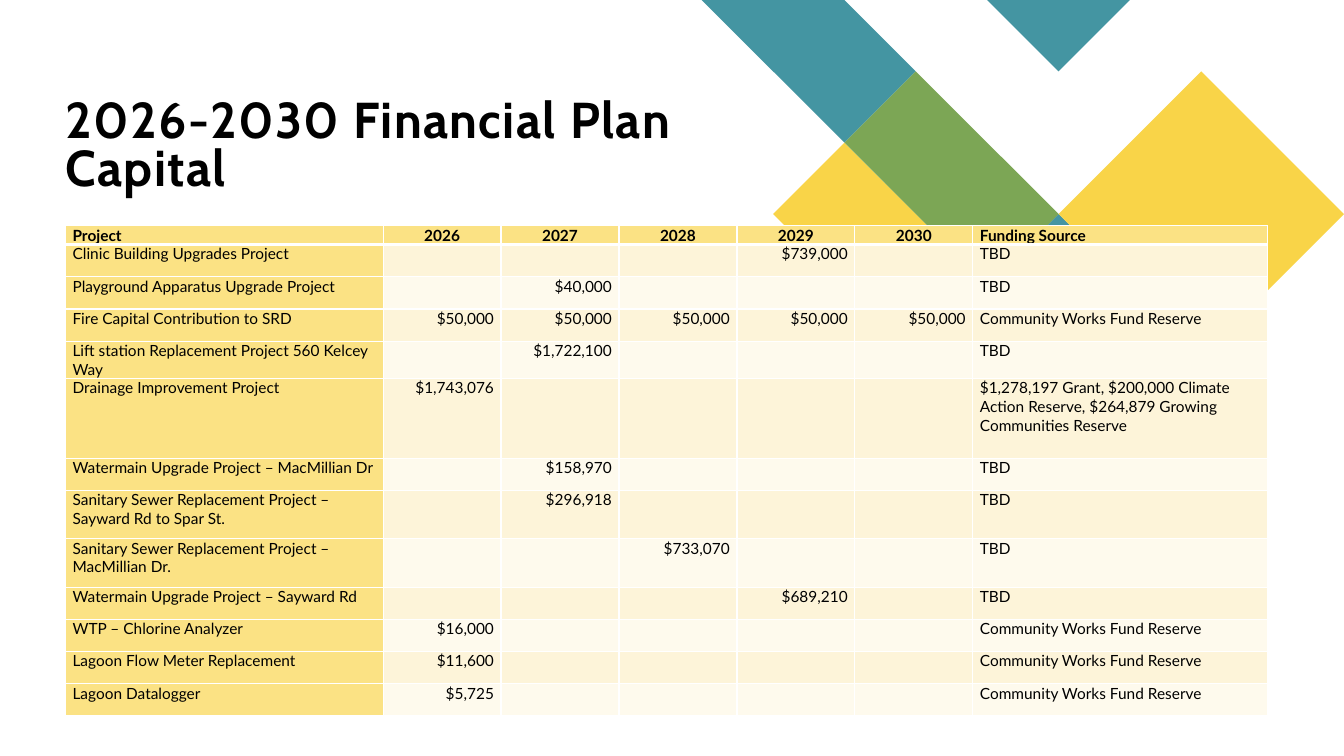
from lxml import etree
from pptx import Presentation
from pptx import util as u
from pptx.dml.color import RGBColor
from pptx.enum import text
from pptx.oxml import ns

COLORS = {
    "teal": "4495A2", "yellow": "F9D448", "green": "7CA655", "gold": "FBE284",
    "cream": "FDF4D9", "ivory": "FEFAED", "white": "FFFFFF", "black": "000000",
}
LEFT, CENTER, RIGHT = text.PP_ALIGN.LEFT, text.PP_ALIGN.CENTER, text.PP_ALIGN.RIGHT
YEARS = ["2026", "2027", "2028", "2029", "2030"]
COLUMN_WIDTHS = [3.15] + [1.17] * len(YEARS) + [2.92]
HEADER_HEIGHT = 0.16
RESERVE = "Community Works Fund Reserve"
DRAINAGE_FUNDING = ("$1,278,197 Grant, $200,000 Climate Action Reserve, "
                    "$264,879 Growing Communities Reserve")
PROJECTS = [
    ("Clinic Building Upgrades Project", {"2029": "$739,000"}, "TBD", 0.32),
    ("Playground Apparatus Upgrade Project", {"2027": "$40,000"}, "TBD", 0.32),
    ("Fire Capital Contribution to SRD", dict.fromkeys(YEARS, "$50,000"), RESERVE, 0.32),
    ("Lift station Replacement Project 560 Kelcey Way", {"2027": "$1,722,100"}, "TBD", 0.32),
    ("Drainage Improvement Project", {"2026": "$1,743,076"}, DRAINAGE_FUNDING, 0.79),
    ("Watermain Upgrade Project – MacMillian Dr", {"2027": "$158,970"}, "TBD", 0.32),
    ("Sanitary Sewer Replacement Project – Sayward Rd to Spar St.",
     {"2027": "$296,918"}, "TBD", 0.48),
    ("Sanitary Sewer Replacement Project – MacMillian Dr.", {"2028": "$733,070"}, "TBD", 0.48),
    ("Watermain Upgrade Project – Sayward Rd", {"2029": "$689,210"}, "TBD", 0.32),
    ("WTP – Chlorine Analyzer", {"2026": "$16,000"}, RESERVE, 0.32),
    ("Lagoon Flow Meter Replacement", {"2026": "$11,600"}, RESERVE, 0.32),
    ("Lagoon Datalogger", {"2026": "$5,725"}, RESERVE, 0.32),
]
PATTERN = [
    ("teal", [[(3, 1), (2, 0), (0, 0), (2, 2)], [(6, 4), (5, 3), (4, 4), (5, 5)]]),
    ("yellow", [[(2, 2), (1, 3), (3, 5), (4, 4)]]),
    ("teal", [[(6, 0), (4, 0), (5, 1)]]),
    ("green", [[(3, 1), (2, 2), (4, 4), (5, 3)]]),
    ("yellow", [[(9, 3), (7, 1), (5, 3), (7, 5)]]),
]


def rgb(name):
    """Return the named colour."""
    return RGBColor.from_string(COLORS[name])


def write(frame, words, font="Lato", size=11, bold=False, color="black",
          align=LEFT, line_spacing=None, tracking=None):
    """Put one formatted paragraph into a text frame."""
    paragraph = frame.paragraphs[0]
    paragraph.alignment = align
    paragraph.line_spacing = line_spacing
    if not words:
        etree.SubElement(paragraph._p, ns.qn("a:endParaRPr"), sz=str(size * 100))
        return
    run = paragraph.add_run()
    run.text = words
    run.font.name, run.font.size, run.font.bold = font, u.Pt(size), bold
    run.font.color.rgb = rgb(color)
    if tracking:
        run.font._element.set("spc", str(tracking * 100))


class PlanSlide:
    """Hold the slide and draw its kinds of element."""

    def __init__(self, deck):
        """Add a title-only slide."""
        self.slide = deck.slides.add_slide(deck.slide_layouts[5])

    def pattern(self, left, width, units):
        """Draw the diagonal bands on a square grid."""
        step = u.Inches(width) / units
        for color, outlines in PATTERN:
            first, *others = outlines
            builder = self.slide.shapes.build_freeform(*first[0], scale=step)
            builder.add_line_segments(first[1:], close=True)
            for outline in others:
                builder.move_to(*outline[0])
                builder.add_line_segments(outline[1:], close=True)
            band = builder.convert_to_shape(u.Inches(left), 0)
            band.shadow.inherit = False
            band.fill.solid()
            band.fill.fore_color.rgb = rgb(color)
            band.line.fill.background()

    def title(self, words, left, top, width, height):
        """Place and format the title."""
        heading = self.slide.shapes.title
        heading.left, heading.top = u.Inches(left), u.Inches(top)
        heading.width, heading.height = u.Inches(width), u.Inches(height)
        frame = heading.text_frame
        frame.word_wrap = True
        frame.auto_size = text.MSO_AUTO_SIZE.NONE
        frame.vertical_anchor = text.MSO_ANCHOR.BOTTOM
        frame.margin_left = frame.margin_right = frame.margin_top = frame.margin_bottom = 0
        write(frame, words, font="Cabin", size=36, bold=True, line_spacing=0.8, tracking=1)

    def cell(self, cell, words, fill, borders, **style):
        """Fill one table cell."""
        cell.margin_left = cell.margin_right = u.Inches(0.07)
        cell.margin_top = cell.margin_bottom = 0
        properties = cell._tc.get_or_add_tcPr()
        for side, points in borders.items():
            line = etree.SubElement(properties, ns.qn(f"a:ln{side}"), w=str(u.Pt(points)))
            solid = etree.SubElement(line, ns.qn("a:solidFill"))
            etree.SubElement(solid, ns.qn("a:srgbClr"), val=COLORS["white"])
        cell.fill.solid()
        cell.fill.fore_color.rgb = rgb(fill)
        write(cell.text_frame, words, **style)

    def plan_table(self, left, top):
        """Draw the capital plan table."""
        heights = [HEADER_HEIGHT] + [project[-1] for project in PROJECTS]
        table = self.slide.shapes.add_table(
            len(heights), len(COLUMN_WIDTHS), u.Inches(left), u.Inches(top),
            u.Inches(sum(COLUMN_WIDTHS)), u.Inches(sum(heights))).table
        table.horz_banding = False
        for column, width in zip(table.columns, COLUMN_WIDTHS):
            column.width = u.Inches(width)
        for row, height in zip(table.rows, heights):
            row.height = u.Inches(height)
        last = len(YEARS) + 1
        for col, label in enumerate(["Project", *YEARS, "Funding Source"]):
            self.cell(table.cell(0, col), label, "gold", {"L": 1, "R": 1, "T": 1, "B": 3},
                      bold=True, align=CENTER if 0 < col < last else LEFT)
        for row, (project, amounts, funding, _) in enumerate(PROJECTS, start=1):
            band = "cream" if row % 2 else "ivory"
            borders = {"L": 1, "R": 1, "T": 3 if row == 1 else 1, "B": 1}
            values = [project, *(amounts.get(year, "") for year in YEARS), funding]
            for col, value in enumerate(values):
                self.cell(table.cell(row, col), value, band if col else "gold", borders,
                          align=RIGHT if 0 < col < last else LEFT)


def main():
    """Build and save the slide."""
    deck = Presentation()
    deck.slide_width, deck.slide_height = u.Inches(13.33), u.Inches(7.5)
    plan = PlanSlide(deck)
    plan.pattern(left=6.96, width=6.37, units=9)
    plan.title("2026-2030 Financial Plan Capital", 0.65, 0.21, 7.48, 1.74)
    plan.plan_table(0.65, 2.24)
    deck.save("out.pptx")


if __name__ == "__main__":
    main()
